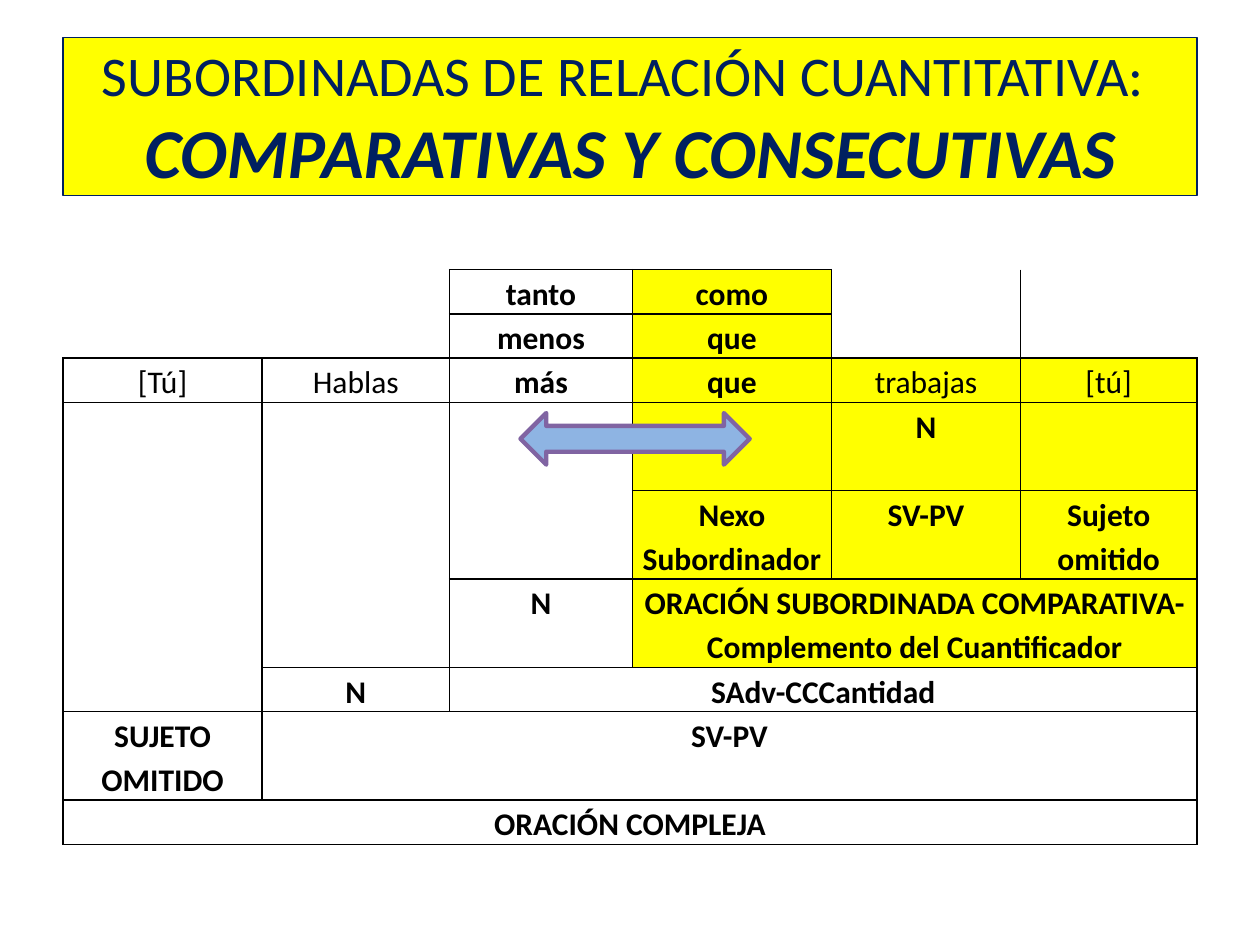
from dataclasses import dataclass

from lxml.etree import SubElement
from pptx import Presentation
from pptx.dml.color import RGBColor
from pptx.enum.shapes import MSO_SHAPE as Shape
from pptx.enum.text import MSO_ANCHOR as Anchor, MSO_AUTO_SIZE as AutoSize, PP_ALIGN as Align
from pptx.oxml.ns import qn
from pptx.util import Pt


@dataclass(frozen=True)
class Theme:
    font: str = "Calibri"
    navy: str = "002060"
    yellow: str = "FFFF00"
    black: str = "000000"
    blue: str = "8EB4E3"
    purple: str = "8064A2"
    title_size: int = 32
    subtitle_size: int = 40
    cell_size: int = 18
    line_spacing: float = 1.15


THEME = Theme()

TITLE = "SUBORDINADAS DE RELACIÓN CUANTITATIVA: "
SUBTITLE = "COMPARATIVAS Y CONSECUTIVAS"

COLUMN_WIDTHS = [113.8, 107.1, 104.5, 113.8, 108, 100.8]
ROW_LINES = [1, 1, 1, 2, 2, 2, 1, 2, 1]
LINE_HEIGHT = 25.2

WORDS = [
    ["", "", "tanto", "como", "", ""],
    ["", "", "menos", "que", "", ""],
    ["[Tú]", "Hablas", "más", "que", "trabajas", "[tú]"],
    ["", "", "", "", "N", ""],
    ["", "", "", "Nexo Subordinador", "SV-PV", "Sujeto omitido"],
    ["", "", "N", "ORACIÓN SUBORDINADA COMPARATIVA-\nComplemento del Cuantificador", "", ""],
    ["", "N", "SAdv-CCCantidad", "", "", ""],
    ["SUJETO\nOMITIDO", "SV-PV", "", "", "", ""],
    ["ORACIÓN COMPLEJA", "", "", "", "", ""],
]
LIGHT_WORDS = {"[Tú]", "Hablas", "trabajas", "[tú]"}
MERGES = [
    ((3, 0), (6, 0)), ((3, 1), (5, 1)), ((3, 2), (4, 2)),
    ((5, 3), (5, 5)), ((6, 2), (6, 5)), ((7, 1), (7, 5)), ((8, 0), (8, 5)),
]
OPEN_CELL_SIDES = {
    (0, 0): "", (0, 1): "R", (0, 4): "LR", (0, 5): "L",
    (1, 0): "B", (1, 1): "RB", (1, 4): "LRB", (1, 5): "LB",
}


def color(value):
    return RGBColor.from_string(value)


def add_run(paragraph, text, size, ink, bold=False, italic=False):
    run = paragraph.add_run()
    run.text = text
    font = run.font
    font.name, font.size, font.bold, font.italic = THEME.font, Pt(size), bold, italic
    font.color.rgb = color(ink)


def style_shape(shape, fill, line, width):
    shape.fill.solid()
    shape.fill.fore_color.rgb = color(fill)
    shape.line.color.rgb = color(line)
    shape.line.width = Pt(width)
    shape.shadow.inherit = False


def set_borders(cell, sides):
    properties = cell._tc.get_or_add_tcPr()
    for index, side in enumerate("LRTB"):
        border = SubElement(properties, qn(f"a:ln{side}"), w=str(Pt(1)))
        if side in sides:
            fill = SubElement(border, qn("a:solidFill"))
            SubElement(fill, qn("a:srgbClr"), val=THEME.black)
        else:
            SubElement(border, qn("a:noFill"))
        properties.insert(index, border)


def is_yellow(row, column):
    return (row <= 5 and column == 3) or (2 <= row <= 5 and column > 3)


def fill_cell(cell, row, column):
    cell.margin_left = cell.margin_right = Pt(5)
    cell.margin_top = cell.margin_bottom = 0
    if is_yellow(row, column):
        cell.fill.solid()
        cell.fill.fore_color.rgb = color(THEME.yellow)
    else:
        cell.fill.background()
    set_borders(cell, OPEN_CELL_SIDES.get((row, column), "LRTB"))
    text = WORDS[row][column]
    if not text:
        return
    for index, line in enumerate(text.split("\n")):
        frame = cell.text_frame
        paragraph = frame.add_paragraph() if index else frame.paragraphs[0]
        paragraph.alignment = Align.CENTER
        paragraph.line_spacing = THEME.line_spacing
        add_run(paragraph, line, THEME.cell_size, THEME.black, bold=text not in LIGHT_WORDS)


def add_title(slide):
    title = slide.shapes.title
    title.left, title.top, title.width, title.height = Pt(36), Pt(21.6), Pt(648), Pt(90)
    style_shape(title, THEME.yellow, THEME.navy, 0.75)
    frame = title.text_frame
    frame.auto_size = AutoSize.NONE
    frame.vertical_anchor = Anchor.MIDDLE
    paragraph = frame.paragraphs[0]
    paragraph.alignment = Align.CENTER
    add_run(paragraph, TITLE, THEME.title_size, THEME.navy)
    paragraph.add_line_break()
    add_run(paragraph, SUBTITLE, THEME.subtitle_size, THEME.navy, bold=True, italic=True)


def add_analysis(slide):
    heights = [lines * LINE_HEIGHT for lines in ROW_LINES]
    table = slide.shapes.add_table(
        len(heights), len(COLUMN_WIDTHS), Pt(36), Pt(154),
        Pt(sum(COLUMN_WIDTHS)), Pt(sum(heights)),
    ).table
    table.first_row = table.horz_banding = False
    for column, width in zip(table.columns, COLUMN_WIDTHS):
        column.width = Pt(width)
    for row, height in zip(table.rows, heights):
        row.height = Pt(height)
    for row in range(len(heights)):
        for column in range(len(COLUMN_WIDTHS)):
            fill_cell(table.cell(row, column), row, column)
    for first, last in MERGES:
        table.cell(*first).merge(table.cell(*last))


def add_arrow(slide):
    arrow = slide.shapes.add_shape(Shape.LEFT_RIGHT_ARROW, Pt(297.4), Pt(236), Pt(131), Pt(29.5))
    style_shape(arrow, THEME.blue, THEME.purple, 2.5)


def main():
    presentation = Presentation()
    presentation.slide_width, presentation.slide_height = Pt(720), Pt(540)
    slide = presentation.slides.add_slide(presentation.slide_layouts[5])
    add_title(slide)
    add_analysis(slide)
    add_arrow(slide)
    presentation.save("out.pptx")


if __name__ == "__main__":
    main()
